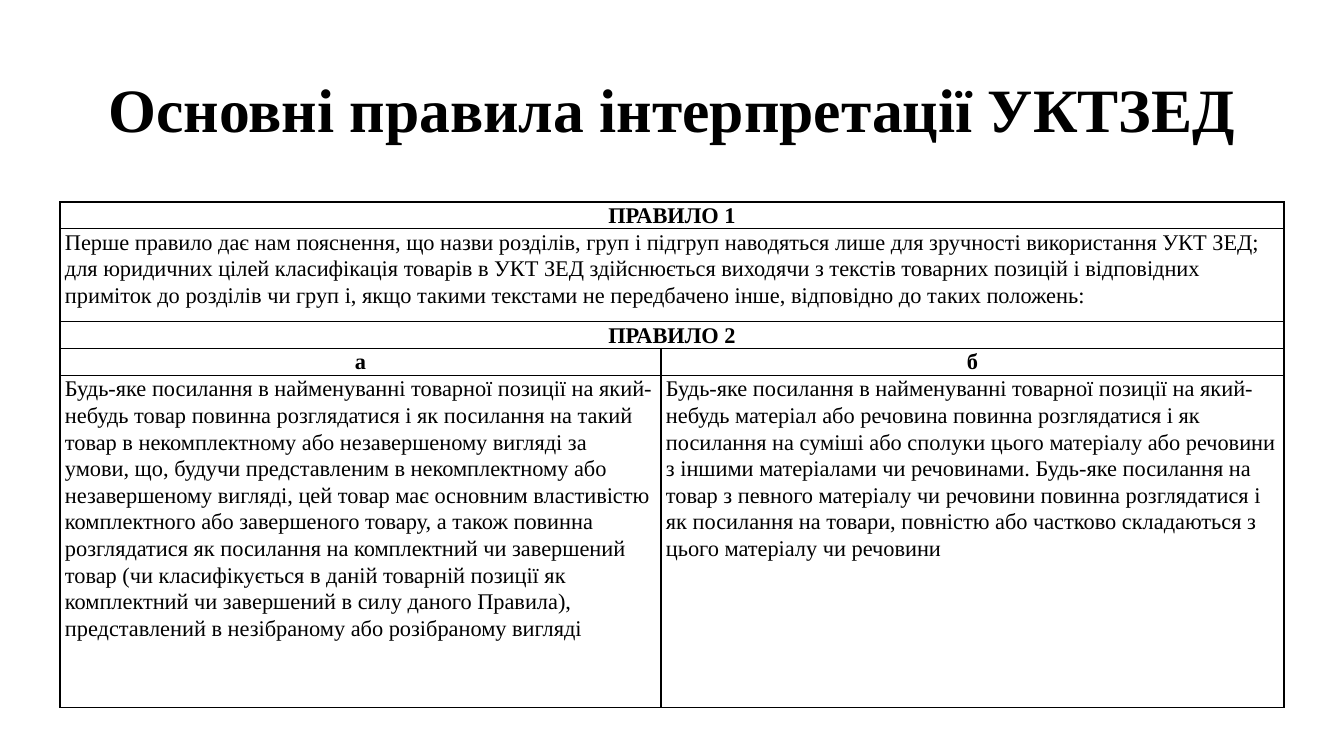
from lxml.etree import SubElement
from pptx import Presentation
from pptx.dml.color import RGBColor
from pptx.enum.text import MSO_ANCHOR, MSO_AUTO_SIZE, PP_ALIGN
from pptx.oxml.ns import qn
from pptx.util import Pt

PX = 9071.43
FONT = "Times New Roman"
BLACK = "000000"
TITLE = "Основнi правила iнтерпретацiї УКТЗЕД"
COLUMN_WIDTHS = [601, 623]
ROW_HEIGHTS = [26, 93, 26, 27, 332]
RULES = [
    ["ПРАВИЛО 1"],
    ["Перше правило дає нам пояснення, що назви розділів, груп і підгруп наводяться лише для зручності "
     "використання УКТ ЗЕД; для юридичних цілей класифікація товарів в УКТ ЗЕД здійснюється виходячи з "
     "текстів товарних позицій і відповідних приміток до розділів чи груп і, якщо такими текстами не "
     "передбачено інше, відповідно до таких положень:"],
    ["ПРАВИЛО 2"],
    ["а", "б"],
    ["Будь-яке посилання в найменуванні товарної позиції на який-небудь товар повинна розглядатися і як "
     "посилання на такий товар в некомплектному або незавершеному вигляді за умови, що, будучи "
     "представленим в некомплектному або незавершеному вигляді, цей товар має основним властивістю "
     "комплектного або завершеного товару, а також повинна розглядатися як посилання на комплектний чи "
     "завершений товар (чи класифікується в даній товарній позиції як комплектний чи завершений в силу "
     "даного Правила), представлений в незібраному або розібраному вигляді",
     "Будь-яке посилання в найменуванні товарної позиції на який-небудь матеріал або речовина повинна "
     "розглядатися і як посилання на суміші або сполуки цього матеріалу або речовини з іншими матеріалами "
     "чи речовинами. Будь-яке посилання на товар з певного матеріалу чи речовини повинна розглядатися і "
     "як посилання на товари, повністю або частково складаються з цього матеріалу чи речовини"],
]
HEADING_ROWS = {0, 2, 3}


def px(length):
    return round(length * PX)


def color(value):
    return RGBColor.from_string(value)


def write(frame, text, size, bold, align, spacing):
    frame.text = text
    para = frame.paragraphs[0]
    para.alignment = align
    para.line_spacing = spacing
    for span in para.runs:
        span.font.name = FONT
        span.font.size = Pt(size)
        span.font.bold = bold
        span.font.color.rgb = color(BLACK)


def outline(cell):
    properties = cell._tc.get_or_add_tcPr()
    for side in ("lnL", "lnR", "lnT", "lnB"):
        line = SubElement(properties, qn(f"a:{side}"), w=str(Pt(1)))
        fill = SubElement(line, qn("a:solidFill"))
        SubElement(fill, qn("a:srgbClr"), val=BLACK)


def add_title(page, left, top, width, height):
    box = page.shapes.title
    box.left, box.top, box.width, box.height = map(px, (left, top, width, height))
    frame = box.text_frame
    frame.word_wrap = True
    frame.auto_size = MSO_AUTO_SIZE.NONE
    frame.vertical_anchor = MSO_ANCHOR.MIDDLE
    write(frame, TITLE, 44, True, PP_ALIGN.CENTER, 0.9)


def add_rules(page, left, top):
    width, height = sum(COLUMN_WIDTHS), sum(ROW_HEIGHTS)
    table = page.shapes.add_table(len(ROW_HEIGHTS), len(COLUMN_WIDTHS),
                                  *map(px, (left, top, width, height))).table
    table.first_row = table.horz_banding = False
    for column, size in zip(table.columns, COLUMN_WIDTHS):
        column.width = px(size)
    for row, size in zip(table.rows, ROW_HEIGHTS):
        row.height = px(size)
    for cell in table.iter_cells():
        outline(cell)
        cell.fill.background()
        cell.margin_left = cell.margin_right = px(5)
        cell.margin_top = cell.margin_bottom = 0
    for index, texts in enumerate(RULES):
        if len(texts) == 1:
            table.cell(index, 0).merge(table.cell(index, 1))
        heading = index in HEADING_ROWS
        align = PP_ALIGN.CENTER if heading else PP_ALIGN.LEFT
        for column, text in enumerate(texts):
            write(table.cell(index, column).text_frame, text, 16, heading, align, 1.07)


def main():
    deck = Presentation()
    deck.slide_width, deck.slide_height = px(1344), px(756)
    page = deck.slides.add_slide(deck.slide_layouts[5])
    add_title(page, 93, 40, 1159, 146)
    add_rules(page, 60, 202)
    deck.save("out.pptx")


if __name__ == "__main__":
    main()
